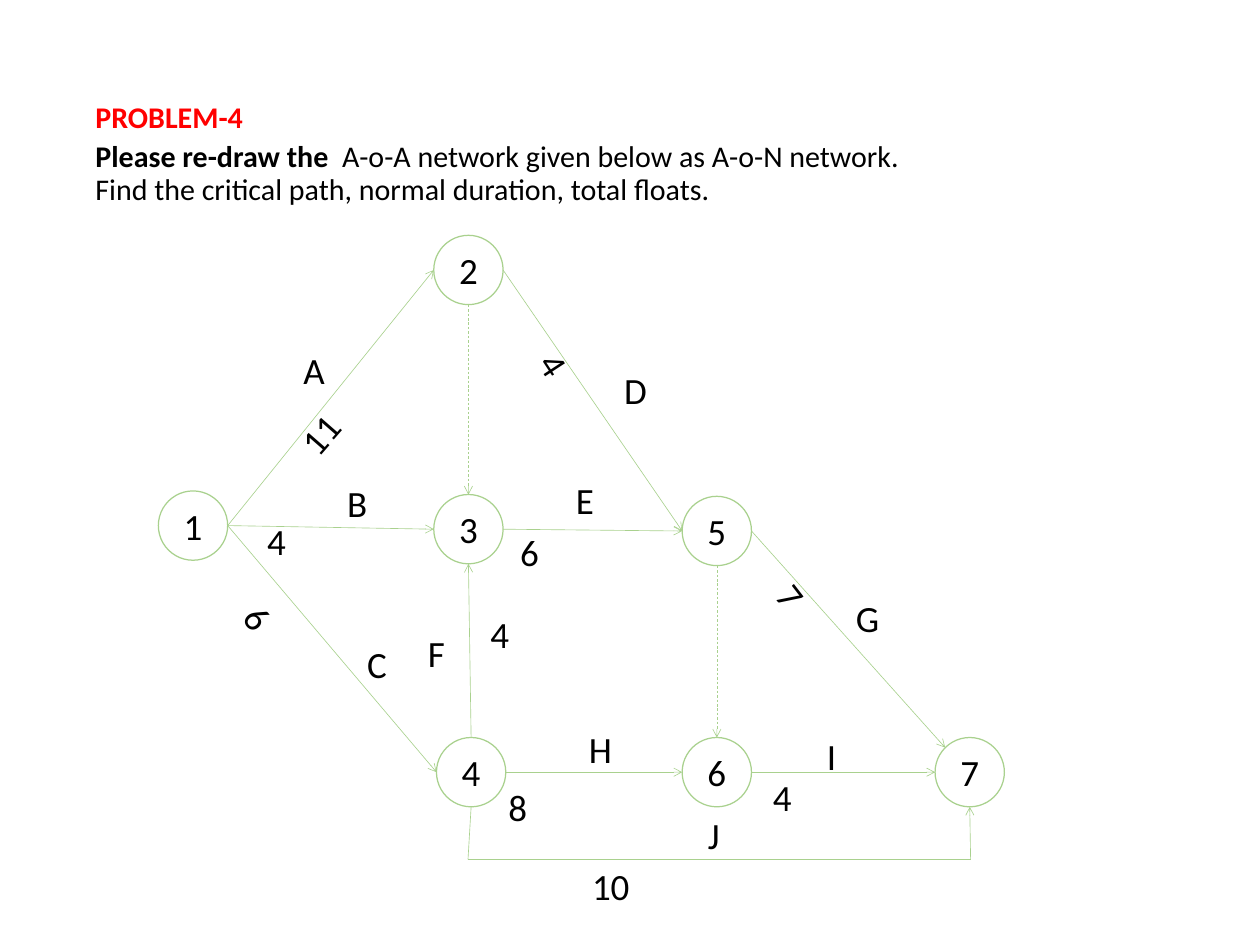
"""Builds the PROBLEM-4 slide: an activity-on-arrow network with its task text."""
from lxml import etree
from pptx import Presentation
from pptx.dml.color import RGBColor
from pptx.enum.dml import MSO_LINE
from pptx.enum.shapes import MSO_CONNECTOR, MSO_SHAPE
from pptx.enum.text import MSO_ANCHOR, MSO_AUTO_SIZE, PP_ALIGN
from pptx.oxml.ns import qn
from pptx.util import Inches, Pt

ELLIPSE, STRAIGHT, DASH = MSO_SHAPE.OVAL, MSO_CONNECTOR.STRAIGHT, MSO_LINE.DASH
LEFT, CENTER, MIDDLE = PP_ALIGN.LEFT, PP_ALIGN.CENTER, MSO_ANCHOR.MIDDLE
FIXED = MSO_AUTO_SIZE.NONE

COLORS = {"ink": "000000", "heading": "FF0000", "paper": "FFFFFF", "edge": "A9D18E"}
FONT = "Calibri"
NETWORK_SIZE, TITLE_SIZE, GAP_SIZE = 29.6, 24, 48
CELL = Inches(0.1)
COLUMNS, ROWS = 140, 105
DIAMETER = 7.7
RADIUS = DIAMETER / 2
LABEL_HEIGHT, NAME_WIDTH, DURATION_WIDTH = 6, 8.8, 6.6

NODES = {
    "1": (21.45, 58.4), "2": (52.05, 30), "3": (52.05, 58.8), "4": (52.35, 85.8),
    "5": (79.65, 59), "6": (79.65, 85.8), "7": (107.75, 85.8),
}
SIDES = {
    "left": (-1, 0), "right": (1, 0), "top": (0, -1), "bottom": (0, 1),
    "corner": (-0.71, -0.71),
}
ACTIVITIES = [
    ("1", "right", "2", "left"), ("1", "right", "3", "left"),
    ("1", "right", "4", "left"), ("2", "right", "5", "left"),
    ("3", "right", "5", "left"), ("4", "top", "3", "bottom"),
    ("4", "right", "6", "left"), ("5", "right", "7", "corner"),
    ("6", "right", "7", "left"),
]
DUMMIES = [("2", "bottom", "3", "top"), ("5", "bottom", "6", "top")]
DETOUR = [(52, 95.5), (107.85, 95.5)]
NAMES = [
    ("A", 30.5, 38.1), ("B", 35.3, 52.9), ("C", 37.5, 70.8), ("D", 66.2, 40.3),
    ("E", 60.6, 52.6), ("F", 44.1, 69.6), ("G", 92, 65.7), ("H", 62.3, 80.2),
    ("I", 88, 81), ("J", 74.9, 89.8),
]
DURATIONS = [
    ("11", 32.4, 45.1, 311.1), ("4", 28.7, 57.1, 0), ("6", 26.2, 66.6, 51),
    ("4", 59, 38.6, 56.8), ("6", 56.8, 58.3, 0), ("4", 53.5, 67.4, 0),
    ("7", 85.4, 64.3, 52.6), ("8", 55.5, 86.7, 0), ("4", 84.9, 85.6, 0),
    ("10", 64.8, 95.5, 0),
]


def cells(*counts):
    """Turn counts of grid cells into slide lengths."""
    return [round(count * CELL) for count in counts]


def color(name):
    """Look up a palette colour."""
    return RGBColor.from_string(COLORS[name])


def add_span(para, text, size, ink="ink", bold=False):
    """Append one formatted run to a paragraph."""
    span = para.add_run()
    span.text = text
    span.font.name, span.font.size, span.font.bold = FONT, Pt(size), bold
    span.font.color.rgb = color(ink)


def add_break(para, size):
    """Append a line break with its own text size."""
    para.add_line_break()
    props = etree.SubElement(para._p.findall(qn("a:br"))[-1], qn("a:rPr"))
    props.set("sz", str(size * 100))


def add_title(page):
    """Fill the title placeholder with the task."""
    title = page.shapes.title
    title.left, title.top, title.width, title.height = cells(9.6, 5.6, 120.7, 20.3)
    frame = title.text_frame
    frame.word_wrap, frame.auto_size, frame.vertical_anchor = True, FIXED, MIDDLE
    para = frame.paragraphs[0]
    para.alignment, para.line_spacing = LEFT, 0.9
    add_span(para, "PROBLEM-4", TITLE_SIZE, "heading", True)
    add_span(para, " ", GAP_SIZE)
    add_break(para, GAP_SIZE)
    add_span(para, "Please re-draw the ", TITLE_SIZE, bold=True)
    add_span(para, " A-o-A network given below as A-o-N network.", TITLE_SIZE)
    add_break(para, TITLE_SIZE)
    add_span(para, "Find the critical path, normal duration, total floats.", TITLE_SIZE)


def add_node(page, name):
    """Draw one numbered event circle."""
    x, y = NODES[name]
    node = page.shapes.add_shape(
        ELLIPSE, *cells(x - RADIUS, y - RADIUS, DIAMETER, DIAMETER))
    node.shadow.inherit = False
    node.fill.solid()
    node.fill.fore_color.rgb = color("paper")
    node.line.color.rgb, node.line.width = color("edge"), Pt(1)
    frame = node.text_frame
    frame.margin_left = frame.margin_right = frame.margin_top = frame.margin_bottom = 0
    frame.vertical_anchor = MIDDLE
    para = frame.paragraphs[0]
    para.alignment = CENTER
    add_span(para, name, NETWORK_SIZE)


def add_label(page, text, x, y, width, align, turn=0):
    """Place a name or a duration beside an arrow."""
    box = page.shapes.add_textbox(*cells(x, y, width, LABEL_HEIGHT))
    box.rotation = turn
    box.text_frame.word_wrap = True
    para = box.text_frame.paragraphs[0]
    para.alignment = align
    add_span(para, text, NETWORK_SIZE)


def rim(name, side):
    """Find the point on a node's rim at the given side."""
    x, y = NODES[name]
    across, down = SIDES[side]
    return x + across * RADIUS, y + down * RADIUS


def add_line(page, start, end, arrow=True, dashed=False):
    """Draw a thin line, with an open arrowhead if asked."""
    line = page.shapes.add_connector(STRAIGHT, *cells(*start, *end))
    line.line.color.rgb, line.line.width = color("edge"), Pt(0.5)
    if dashed:
        line.line.dash_style = DASH
    if arrow:
        etree.SubElement(line.line._get_or_add_ln(), qn("a:tailEnd")).set("type", "arrow")
    etree.SubElement(line._element.spPr, qn("a:effectLst"))


def main():
    """Build and save the slide."""
    deck = Presentation()
    deck.slide_width, deck.slide_height = cells(COLUMNS, ROWS)
    page = deck.slides.add_slide(deck.slide_layouts[5])
    add_title(page)
    for name in NODES:
        add_node(page, name)
    for links, dashed in ((ACTIVITIES, False), (DUMMIES, True)):
        for source, leave, target, enter in links:
            add_line(page, rim(source, leave), rim(target, enter), dashed=dashed)
    stops = [rim("4", "bottom"), *DETOUR, rim("7", "bottom")]
    for start, end in zip(stops, stops[1:]):
        add_line(page, start, end, arrow=end == stops[-1])
    for text, x, y in NAMES:
        add_label(page, text, x, y, NAME_WIDTH, CENTER)
    for text, x, y, turn in DURATIONS:
        add_label(page, text, x, y, DURATION_WIDTH, LEFT, turn)
    deck.save("out.pptx")


if __name__ == "__main__":
    main()
